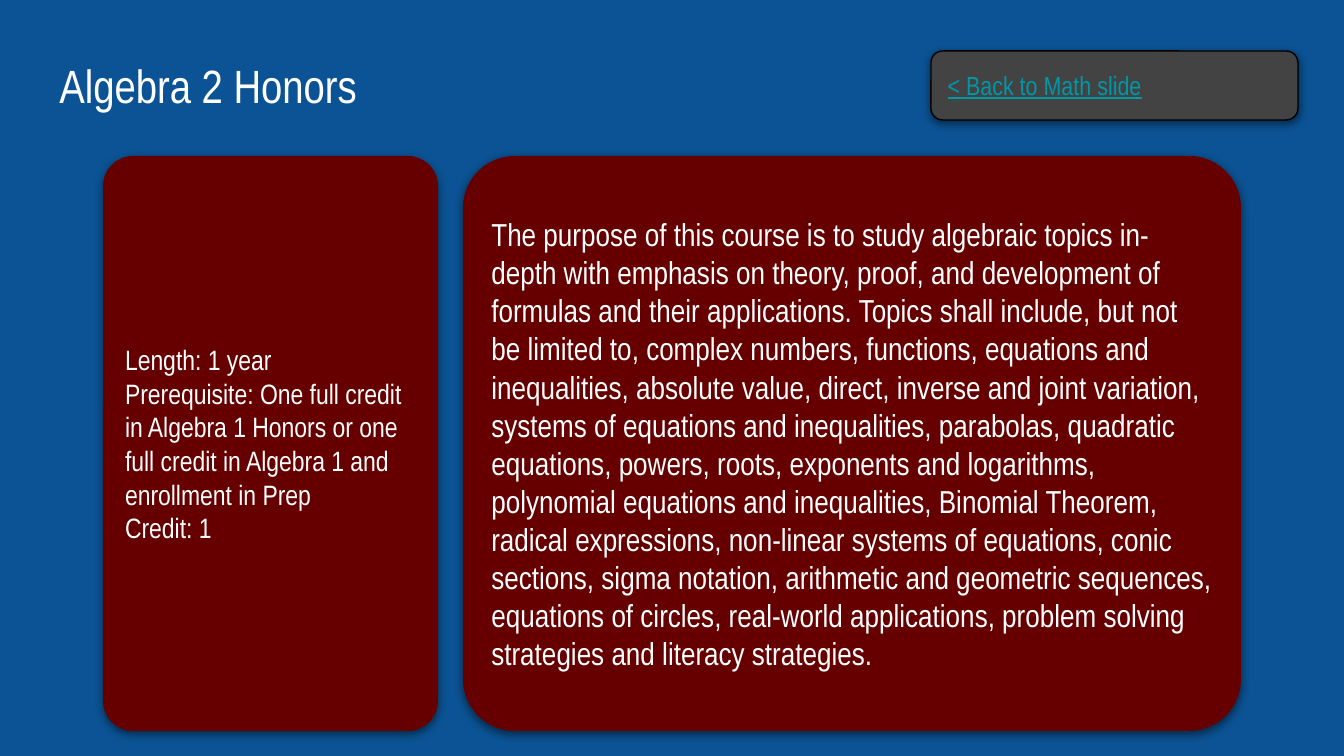
from lxml import etree
from pptx import Presentation
from pptx import util as u
from pptx.dml import color
from pptx.enum import shapes, text
from pptx.oxml import ns

SCALE = 914400 / 134.4
FACTS = [
    "Length: 1 year",
    "Prerequisite: One full credit in Algebra 1 Honors or one full credit "
    "in Algebra 1 and enrollment in Prep",
    "Credit: 1",
]
PURPOSE = (
    "The purpose of this course is to study algebraic topics in-depth with "
    "emphasis on theory, proof, and development of formulas and their "
    "applications. Topics shall include, but not be limited to, complex "
    "numbers, functions, equations and inequalities, absolute value, direct, "
    "inverse and joint variation, systems of equations and inequalities, "
    "parabolas, quadratic equations, powers, roots, exponents and logarithms, "
    "polynomial equations and inequalities, Binomial Theorem, radical "
    "expressions, non-linear systems of equations, conic sections, sigma "
    "notation, arithmetic and geometric sequences, equations of circles, "
    "real-world applications, problem solving strategies and literacy "
    "strategies."
)


def px(n):
    return u.Emu(round(n * SCALE))


def rgb(code):
    return color.RGBColor.from_string(code)


def write(shape, lines, size, ink="FFFFFF", under=None, anchor="MIDDLE"):
    frame = shape.text_frame
    frame.word_wrap = True
    frame.auto_size = text.MSO_AUTO_SIZE.NONE
    frame.vertical_anchor = text.MSO_ANCHOR[anchor]
    for side in ("left", "top", "right", "bottom"):
        setattr(frame, "margin_" + side, u.Inches(0.1))
    for i, line in enumerate(lines):
        para = frame.add_paragraph() if i else frame.paragraphs[0]
        para.alignment = text.PP_ALIGN.LEFT
        para.space_before = u.Pt(0)
        run = para.add_run()
        run.text = line
        run.font.name = "Arial Narrow"
        run.font.size = u.Pt(size)
        run.font.color.rgb = rgb(ink)
        run.font.underline = under


def shade(shape):
    shape.shadow.inherit = False
    effects = shape.element.spPr.find(ns.qn("a:effectLst"))
    outer = etree.SubElement(
        effects, ns.qn("a:outerShdw"), blurRad=str(u.Pt(4.5)),
        dist=str(u.Pt(1.5)), dir="5400000", algn="bl", rotWithShape="0")
    tint = etree.SubElement(outer, ns.qn("a:srgbClr"), val="000000")
    etree.SubElement(tint, ns.qn("a:alpha"), val="50000")


def panel(slide, box, fill, bend, edge=None):
    shape = slide.shapes.add_shape(
        shapes.MSO_SHAPE.ROUNDED_RECTANGLE, *map(px, box))
    shape.adjustments[0] = bend
    shape.fill.solid()
    shape.fill.fore_color.rgb = rgb(fill)
    if edge:
        shape.line.color.rgb = rgb(edge)
        shape.line.width = u.Pt(0.75)
    else:
        shape.line.fill.background()
    shade(shape)
    return shape


def header(slide, box):
    title = slide.shapes.title
    title.left, title.top, title.width, title.height = map(px, box)
    write(title, ["Algebra 2 Honors"], 25, anchor="TOP")


def cards(slide, box):
    left, top, width, height = box
    side, gap = 335, 25
    first = panel(slide, (left, top, side, height), "660000", 0.09)
    write(first, FACTS, 15)
    start = side + gap
    main = panel(slide, (left + start, top, width - start, height),
                 "660000", 0.09)
    write(main, [PURPOSE], 17)


def button(slide, box):
    back = panel(slide, box, "434343", 0.17, edge="000000")
    write(back, ["< Back to Math slide"], 14, ink="0097A7", under=True)


def main():
    deck = Presentation()
    deck.slide_width, deck.slide_height = px(1344), px(756)
    slide = deck.slides.add_slide(deck.slide_layouts.get_by_name("Title Only"))
    slide.background.fill.solid()
    slide.background.fill.fore_color.rgb = rgb("0B5394")
    header(slide, (46, 43, 1253, 85))
    cards(slide, (103, 156, 1138, 575))
    button(slide, (931, 51, 367, 69))
    deck.save("out.pptx")


if __name__ == "__main__":
    main()
